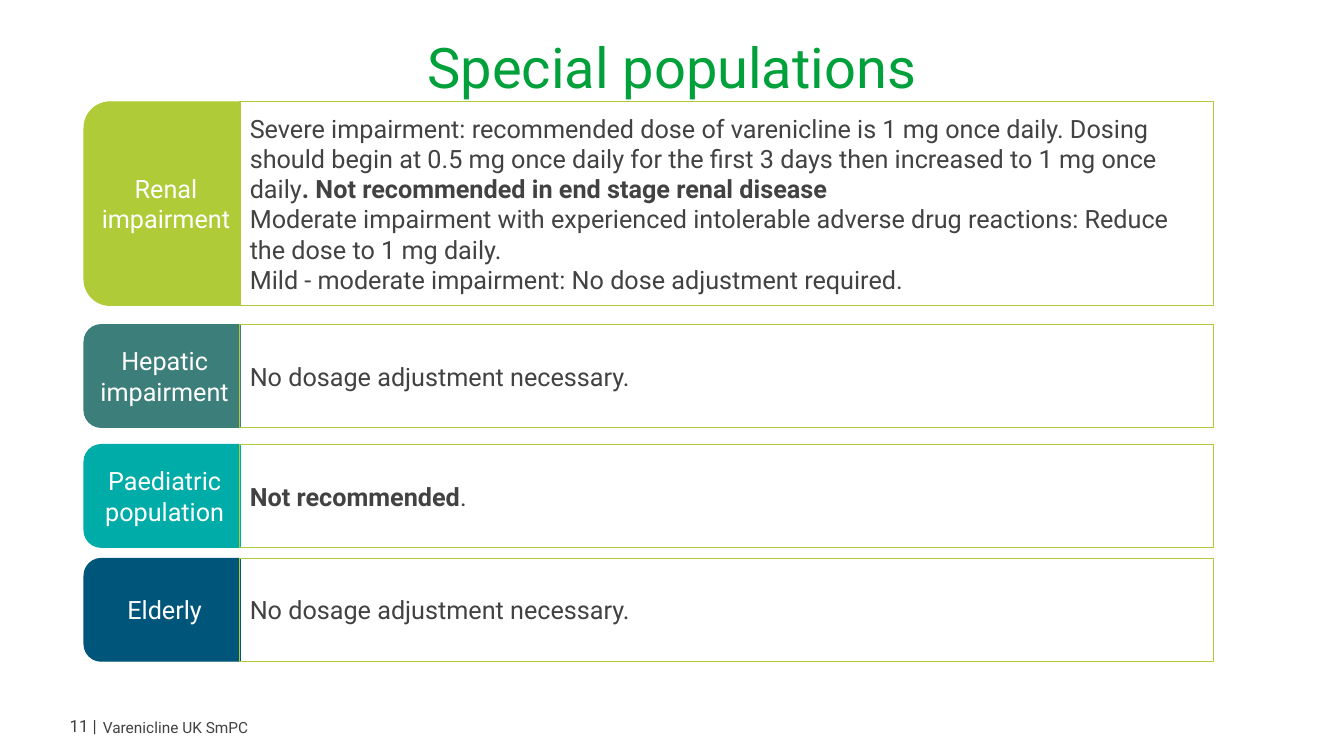
import pptx
import pptx.dml.color
import pptx.enum.shapes
import pptx.enum.text
import pptx.oxml.ns
import pptx.util

RGBColor = pptx.dml.color.RGBColor
GREEN = RGBColor(0x00, 0xA0, 0x3B)
LIME = RGBColor(0xAF, 0xCB, 0x37)
SAGE = RGBColor(0x3C, 0x7E, 0x79)
TEAL = RGBColor(0x00, 0xAC, 0xA8)
NAVY = RGBColor(0x00, 0x56, 0x7A)
GREY = RGBColor(0x42, 0x42, 0x42)
DARK_GREY = RGBColor(0x3F, 0x3E, 0x3E)
WHITE = RGBColor(0xFF, 0xFF, 0xFF)

ALIGN = pptx.enum.text.PP_ALIGN
SHAPE = pptx.enum.shapes.MSO_SHAPE
COLUMNS, ROWS = 40, 30
LABEL_LEFT, LABEL_WIDTH = 2.5, 4.65
DETAIL_LEFT, DETAIL_WIDTH = 7.14, 28.98

POPULATIONS = [
    ("Renal impairment", LIME, 4.04, 8.08, [
        "Severe impairment: recommended dose of varenicline is 1 mg once daily. "
        "Dosing should begin at 0.5 mg once daily for the first 3 days then "
        "increased to 1 mg once daily**. Not recommended in end stage renal disease**",
        "Moderate impairment with experienced intolerable adverse drug reactions: "
        "Reduce the dose to 1 mg daily.",
        "Mild - moderate impairment: No dose adjustment required.",
    ]),
    ("Hepatic impairment", SAGE, 12.88, 4.08, ["No dosage adjustment necessary."]),
    ("Paediatric population", TEAL, 17.64, 4.08, ["**Not recommended**."]),
    ("Elderly", NAVY, 22.16, 4.08, ["No dosage adjustment necessary."]),
]


def write_text(frame, lines, font="Roboto", size=18, color=GREY,
               align=ALIGN.LEFT, spacing=1.0):
    frame.word_wrap = True
    frame.vertical_anchor = pptx.enum.text.MSO_ANCHOR.MIDDLE
    for index, line in enumerate(lines):
        para = frame.add_paragraph() if index else frame.paragraphs[0]
        para.alignment = align
        para.line_spacing = spacing
        for position, piece in enumerate(line.split("**")):
            if piece:
                span = para.add_run()
                span.text = piece
                span.font.name = font
                span.font.size = pptx.util.Pt(size)
                span.font.color.rgb = color
                span.font.bold = position % 2 == 1


class PopulationPage:
    """Draws the elements of one page on a grid of columns and rows."""

    def __init__(self, deck):
        self.page = deck.slides.add_slide(deck.slide_layouts[6])
        self.column = deck.slide_width / COLUMNS
        self.row = deck.slide_height / ROWS

    def place(self, left, top, width, height):
        return (round(left * self.column), round(top * self.row),
                round(width * self.column), round(height * self.row))

    def text(self, words, left, top, width, height, **style):
        box = self.page.shapes.add_textbox(*self.place(left, top, width, height))
        frame = box.text_frame
        frame.margin_left = frame.margin_right = 0
        frame.margin_top = frame.margin_bottom = 0
        write_text(frame, [words], **style)

    def shape(self, kind, bounds, line_color, fill_color=None):
        box = self.page.shapes.add_shape(kind, *bounds)
        box.shadow.inherit = False
        box.line.color.rgb = line_color
        box.line.width = pptx.util.Pt(0.75)
        if fill_color is None:
            box.fill.background()
        else:
            box.fill.solid()
            box.fill.fore_color.rgb = fill_color
        return box

    def label(self, words, color, top, height):
        left, top, width, height = self.place(LABEL_LEFT, top, LABEL_WIDTH, height)
        shift = (width - height) // 2
        bounds = (left + shift, top - shift, height, width)
        box = self.shape(SHAPE.ROUND_2_SAME_RECTANGLE, bounds, color, color)
        box.rotation = 270
        box.adjustments[0] = 0.167
        box.adjustments[1] = 0
        write_text(box.text_frame, [words], color=WHITE, align=ALIGN.CENTER)
        body = box.element.find(".//" + pptx.oxml.ns.qn("a:bodyPr"))
        body.set("vert", "vert")

    def detail(self, lines, top, height):
        bounds = self.place(DETAIL_LEFT, top, DETAIL_WIDTH, height)
        box = self.shape(SHAPE.RECTANGLE, bounds, LIME)
        write_text(box.text_frame, lines)


def main():
    deck = pptx.Presentation()
    deck.slide_width = pptx.util.Inches(13.333)
    deck.slide_height = pptx.util.Inches(7.5)
    page = PopulationPage(deck)
    page.text("Special populations", 2.04, 1.52, 35.91, 2.56,
              size=40, color=GREEN, align=ALIGN.CENTER, spacing=0.9)
    page.text("Varenicline UK SmPC", 3.06, 28.12, 31.56, 1.6, size=11, spacing=0.9)
    page.text("11 |", 1.14, 28, 1.74, 1.6,
              size=12, color=DARK_GREY, align=ALIGN.RIGHT)
    for name, color, top, height, lines in POPULATIONS:
        page.label(name, color, top, height)
        page.detail(lines, top, height)
    deck.save("out.pptx")


if __name__ == "__main__":
    main()
